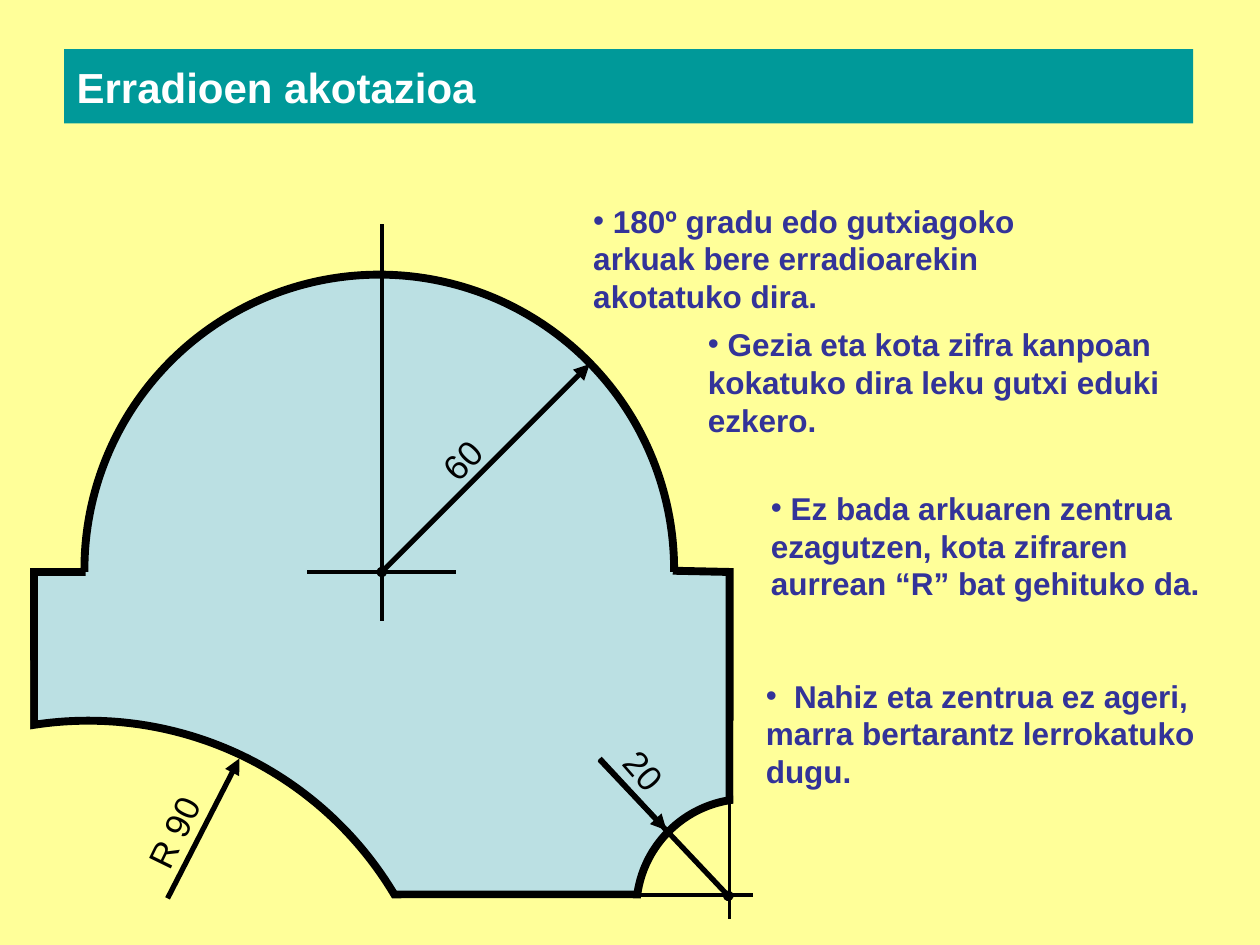
from lxml.etree import SubElement
from pptx import Presentation
from pptx.dml.color import RGBColor
from pptx.enum.shapes import MSO_CONNECTOR as CONNECTOR, MSO_SHAPE as SHAPE
from pptx.enum.text import MSO_ANCHOR as ANCHOR, PP_ALIGN as ALIGN
from pptx.oxml.ns import qn
from pptx.util import Inches, Pt

BLACK = RGBColor(0x00, 0x00, 0x00)
WHITE = RGBColor(0xFF, 0xFF, 0xFF)
CREAM = RGBColor(0xFF, 0xFF, 0x99)
TEAL = RGBColor(0x00, 0x99, 0x99)
PALE_BLUE = RGBColor(0xBB, 0xE0, 0xE3)
INDIGO = RGBColor(0x33, 0x33, 0x99)
OUTLINE, ARROW, AXIS = 4.5, 3, 2.25
MARK_SIZES = {"oval": "sm", "triangle": "med"}

# Content: text, then left, top, width, height in inches
TITLE = "Erradioen akotazioa"
NOTES = [
    (" 180º gradu edo gutxiagoko arkuak bere erradioarekin akotatuko dira.", (4.61, 1.55, 4.39, 1.01)),
    (" Gezia eta kota zifra kanpoan kokatuko dira leku gutxi eduki ezkero.", (5.52, 2.53, 3.79, 1.01)),
    (" Ez bada arkuaren zentrua ezagutzen, kota zifraren aurrean “R” bat gehituko da.", (6.02, 3.83, 3.63, 1.01)),
    ("  Nahiz eta zentrua ez ageri, marra bertarantz lerrokatuko dugu.", (5.98, 5.32, 3.63, 1.01)),
]
DIMENSIONS = [  # text, box, rotation
    ("20", (4.86, 5.9, 0.51, 0.43), 49),
    ("60", (3.41, 3.43, 0.51, 0.43), 314),
    ("R 90", (0.98, 6.39, 0.79, 0.43), 296),
]

# Geometry of the part
LEFT, RIGHT, SHOULDER, BASE = 0.27, 5.79, 4.54, 7.1
CENTRE = (3.03, SHOULDER)
DOME = (3.01, 4.52, 2.34)  # centre x, centre y, radius
SMALL_CUT = (5.93, 7.22, 0.88)
LARGE_CUT = (0.7, 8.55, 2.83)
BODY_OUTLINE = [(5.34, 4.53), (RIGHT, SHOULDER), (RIGHT, BASE),
                (LEFT, BASE), (LEFT, SHOULDER), (0.68, SHOULDER)]
MASKS = [(2.7, 7.13, 4.7, 1.22), (5.82, 5.72, 1.52, 1.78), (-1.98, 5.24, 2.22, 0.95)]
RADIUS_LINES = [  # start, end, start mark, end mark
    (CENTRE, (4.68, 2.89), "oval", "triangle"),
    ((5.78, 7.11), (4.76, 6.03), "oval", None),
    ((4.76, 6.02), (5.29, 6.59), None, "triangle"),
    ((1.33, 7.13), (1.9, 6.02), None, "triangle"),
]
AXES = [
    ((CENTRE[0], 1.78), (CENTRE[0], 4.93)),
    ((2.44, SHOULDER), (3.62, SHOULDER)),
    ((RIGHT, 6.31), (RIGHT, 7.29)),
    ((5, BASE), (5.98, BASE)),
]

presentation = Presentation()
presentation.slide_width, presentation.slide_height = Inches(10), Inches(7.5)
slide = presentation.slides.add_slide(presentation.slide_layouts[6])
slide.background.fill.solid()
slide.background.fill.fore_color.rgb = CREAM


def inches(values):
    return [Inches(value) for value in values]


def set_line(line, width):
    line.color.rgb = BLACK
    line.width = Pt(width)


def add_shape(kind, box, fill, line_width=None):
    shape = slide.shapes.add_shape(kind, *inches(box))
    shape.shadow.inherit = False
    shape.fill.solid()
    shape.fill.fore_color.rgb = fill
    if line_width:
        set_line(shape.line, line_width)
    else:
        shape.line.fill.background()
    return shape


def add_circle(circle, fill):
    x, y, radius = circle
    add_shape(SHAPE.OVAL, (x - radius, y - radius, 2 * radius, 2 * radius), fill, OUTLINE)


def add_outline(points):
    start, *others = [inches(point) for point in points]
    builder = slide.shapes.build_freeform(*start)
    builder.add_line_segments(others, close=False)
    outline = builder.convert_to_shape()
    outline.shadow.inherit = False
    outline.fill.background()
    set_line(outline.line, OUTLINE)
    SubElement(outline.line._get_or_add_ln(), qn("a:miter"), lim="800000")


def add_line(start, end, width, start_mark=None, end_mark=None):
    line = slide.shapes.add_connector(CONNECTOR.STRAIGHT, *inches(start + end))
    set_line(line.line, width)
    properties = line.line._get_or_add_ln()
    for tag, mark in (("a:headEnd", start_mark), ("a:tailEnd", end_mark)):
        if mark:
            size = MARK_SIZES[mark]
            SubElement(properties, qn(tag), type=mark, w=size, len=size)
    SubElement(line._element.spPr, qn("a:effectLst"))


def write(shape, text, size, color, bold=False, wrap=True, anchor=ANCHOR.TOP, bullet=False):
    frame = shape.text_frame
    frame.word_wrap = wrap
    frame.vertical_anchor = anchor
    paragraph = frame.paragraphs[0]
    paragraph.alignment = ALIGN.LEFT
    run = paragraph.add_run()
    run.text = text
    run.font.name, run.font.size, run.font.bold = "Arial", Pt(size), bold
    run.font.color.rgb = color
    if bullet:
        properties = paragraph._p.get_or_add_pPr()
        properties.set("marL", "0")
        properties.set("indent", str(Inches(-0.12)))
        bullet_color = SubElement(properties, qn("a:buClr"))
        SubElement(bullet_color, qn("a:srgbClr"), val=str(color))
        SubElement(properties, qn("a:buFont"), typeface="Arial")
        SubElement(properties, qn("a:buChar"), char="•")


# Title bar
title_bar = add_shape(SHAPE.RECTANGLE, (0.51, 0.39, 8.96, 0.59), TEAL)
write(title_bar, TITLE, 24, WHITE, bold=True, anchor=ANCHOR.MIDDLE)

# Part: dome, body and outline
add_circle(DOME, PALE_BLUE)
add_shape(SHAPE.RECTANGLE, (LEFT, SHOULDER, RIGHT - LEFT, BASE - SHOULDER), PALE_BLUE)
add_outline(BODY_OUTLINE)

# Round cuts, trimmed by background blocks
for cut in (SMALL_CUT, LARGE_CUT):
    add_circle(cut, CREAM)
for mask in MASKS:
    add_shape(SHAPE.RECTANGLE, mask, CREAM)

# Radius arrows and centre axes
for start, end, start_mark, end_mark in RADIUS_LINES:
    add_line(start, end, ARROW, start_mark, end_mark)
for start, end in AXES:
    add_line(start, end, AXIS)

# Dimension figures and notes
for text, box, rotation in DIMENSIONS:
    label = slide.shapes.add_textbox(*inches(box))
    label.rotation = rotation
    write(label, text, 20, BLACK, wrap=False)
for text, box in NOTES:
    write(slide.shapes.add_textbox(*inches(box)), text, 18, INDIGO, bold=True, bullet=True)

presentation.save("out.pptx")
